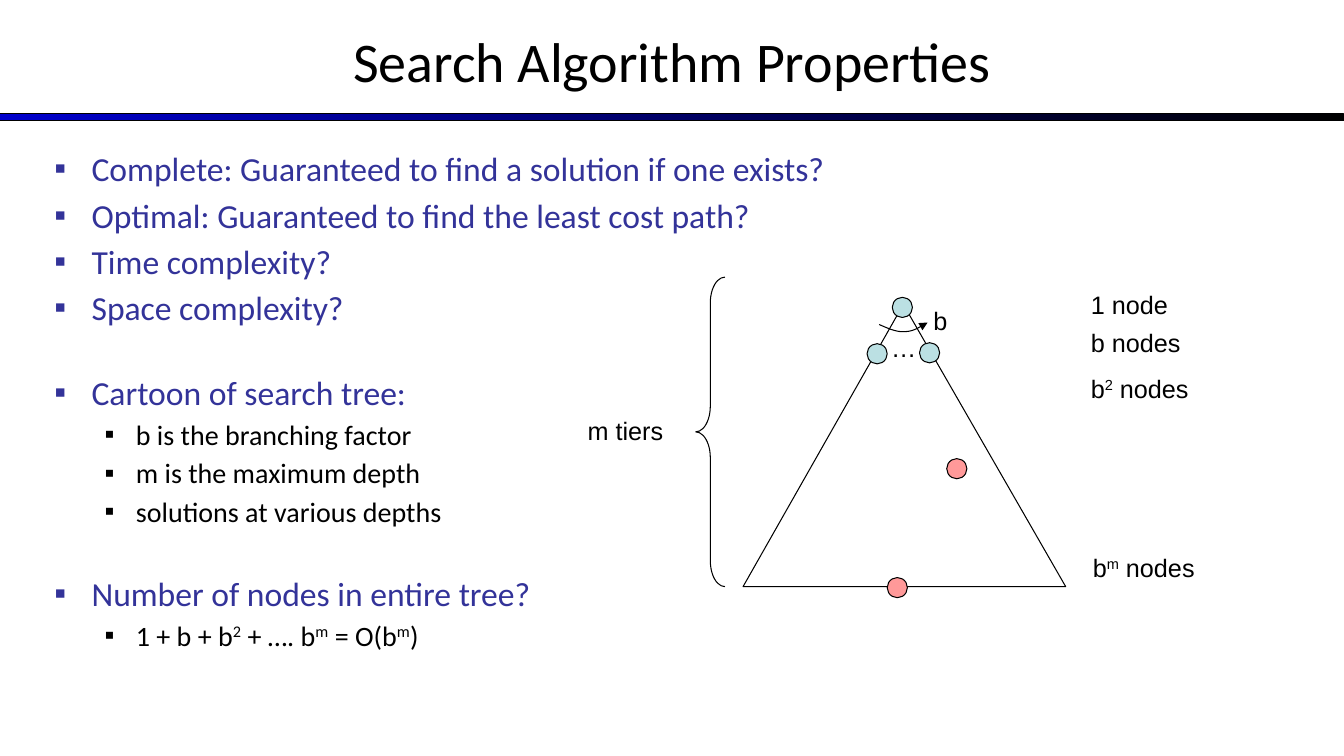
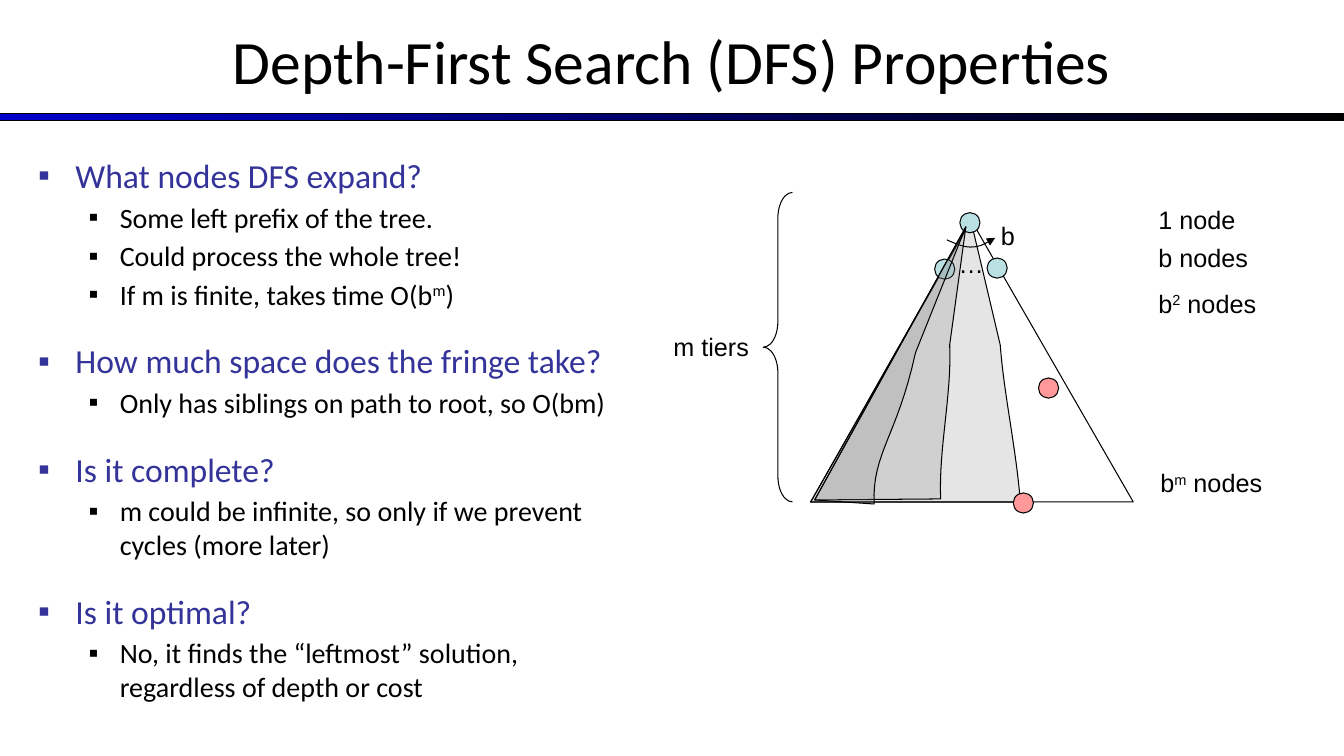
from dataclasses import dataclass

from lxml.etree import SubElement
from pptx import Presentation
from pptx.dml.color import RGBColor
from pptx.enum.shapes import MSO_SHAPE
from pptx.enum.text import MSO_ANCHOR, MSO_AUTO_SIZE, PP_ALIGN
from pptx.oxml.ns import qn
from pptx.shapes.autoshape import Shape
from pptx.slide import Slide
from pptx.util import Emu, Pt

EMU_PER_PX = 9144
SLIDE_W, SLIDE_H = 1333, 750
NODE_SIZE = 20
LABEL_H = 40
COLORS = {
    "ink": "000000",
    "heading": "333399",
    "band": "0000CC",
    "node": "BBE0E3",
    "goal": "FF9999",
    "sweep": "808080",
}

Point = tuple[int, int]
Outline = list[tuple[Point, ...]]


@dataclass(frozen=True)
class Label:
    """A tree label placed relative to the apex; carets enclose superscripts."""

    text: str
    left: int
    top: int
    width: int


@dataclass(frozen=True)
class Level:
    """The look of one outline level."""

    size: int
    color: str
    margin: int
    hanging: int
    space_before: float


@dataclass(frozen=True)
class Topic:
    """A heading with the points listed under it."""

    heading: str
    points: tuple[str, ...] = ()
    space_before: float = 4.3


@dataclass(frozen=True)
class Tree:
    """What differs between the search trees."""

    apex: Point
    tiers: Label
    goals: tuple[Point, ...]


HEADING = Level(24, "heading", 37, 37, 4.3)
POINT = Level(20, "ink", 81, 31, 3.5)

TREE_SIDES: Outline = [((-159, 280),), ((161, 280),), ((0, 0),)]
BRANCH_ARC: Outline = [
    ((-24, 20),),
    ((-15, 24), (-6, 28), (2, 27)),
    ((10, 27), (17, 22), (24, 18)),
]
TREE_NODES: list[Point] = [(-11, -7), (-36, 39), (16, 38)]
TREE_LABELS = [
    Label("…", -22, 23, 30),
    Label("b", 20, -4, 33),
    Label("1 node", 176, -20, 122),
    Label("b nodes", 176, 18, 122),
    Label("b^2^ nodes", 176, 63, 122),
    Label("b^m^ nodes", 178, 241, 160),
]

WIDE_SWEEP: Outline = [
    ((804, 498),),
    ((1012, 498),),
    ((1008, 446), (996, 393), (992, 342)),
    ((963, 219),),
]
NARROW_SWEEPS: list[Outline] = [
    [
        ((808, 496),),
        ((933, 495),),
        ((931, 444), (944, 393), (942, 342)),
        ((958, 225),),
    ],
    [
        ((808, 496),),
        ((867, 500),),
        ((865, 449), (890, 433), (908, 350)),
        ((958, 225),),
    ],
]

PROPERTY_TOPICS = [
    Topic("Complete: Guaranteed to find a solution if one exists?"),
    Topic("Optimal: Guaranteed to find the least cost path?"),
    Topic("Time complexity?"),
    Topic("Space complexity?"),
    Topic(
        "Cartoon of search tree:",
        (
            "b is the branching factor",
            "m is the maximum depth",
            "solutions at various depths",
        ),
        32,
    ),
    Topic("Number of nodes in entire tree?", ("1 + b + b^2^ + …. b^m^ = O(b^m^)",), 32),
]
DFS_TOPICS = [
    Topic(
        "What nodes DFS expand?",
        (
            "Some left prefix of the tree.",
            "Could process the whole tree!",
            "If m is finite, takes time O(b^m^)",
        ),
    ),
    Topic(
        "How much space does the fringe take?",
        ("Only has siblings on path to root, so O(bm)",),
        21,
    ),
    Topic(
        "Is it complete?",
        ("m could be infinite, so only if we prevent cycles (more later)",),
        21,
    ),
    Topic(
        "Is it optimal?",
        ("No, it finds the “leftmost” solution, regardless of depth or cost",),
        21,
    ),
]


def px(length: float) -> Emu:
    """Turn px into EMU."""
    return Emu(round(length * EMU_PER_PX))


def rgb(name: str) -> RGBColor:
    """Look up a named colour."""
    return RGBColor.from_string(COLORS[name])


def style_shape(shape: Shape, fill: str | None = None) -> None:
    """Give a shape a thin black line, an optional fill and no shadow."""
    shape.shadow.inherit = False
    shape.line.color.rgb = rgb("ink")
    shape.line.width = Pt(0.75)
    if fill:
        shape.fill.solid()
        shape.fill.fore_color.rgb = rgb(fill)
    else:
        shape.fill.background()


def add_preset(
    slide: Slide, preset: MSO_SHAPE, box: tuple[int, int, int, int], fill: str | None = None
) -> Shape:
    """Draw a styled preset shape."""
    shape = slide.shapes.add_shape(preset, *map(px, box))
    style_shape(shape, fill)
    return shape


def add_node(slide: Slide, left: int, top: int, fill: str) -> None:
    """Draw one tree node."""
    add_preset(slide, MSO_SHAPE.OVAL, (left, top, NODE_SIZE, NODE_SIZE), fill)


def trace(outline: Outline, steps: int = 16) -> list[tuple[float, float]]:
    """List the vertices of an outline made of lines and cubic curves."""
    vertices: list[tuple[float, float]] = []
    for segment in outline:
        if len(segment) == 1:
            vertices.append(segment[0])
            continue
        controls = (vertices[-1], *segment)
        for step in range(1, steps + 1):
            t = step / steps
            weights = ((1 - t) ** 3, 3 * t * (1 - t) ** 2, 3 * t * t * (1 - t), t**3)
            x, y = (sum(w * c[axis] for w, c in zip(weights, controls)) for axis in (0, 1))
            vertices.append((x, y))
    return vertices


def add_outline(
    slide: Slide, outline: Outline, origin: Point = (0, 0), closed: bool = True, fill: str | None = None
) -> Shape:
    """Draw a styled freeform."""
    start, *rest = [(px(x + origin[0]), px(y + origin[1])) for x, y in trace(outline)]
    builder = slide.shapes.build_freeform(*start, scale=1.0)
    builder.add_line_segments(rest, close=closed)
    shape = builder.convert_to_shape()
    style_shape(shape, fill)
    return shape


def add_sweep(slide: Slide, outline: Outline) -> None:
    """Draw a translucent region of expanded nodes."""
    sweep = add_outline(slide, outline, fill="sweep")
    tint = sweep._element.spPr.find(qn("a:solidFill"))[0]
    SubElement(tint, qn("a:alpha"), val="20000")


def write_runs(paragraph, text: str, font: str, size: int, color: str) -> None:
    """Write text whose caret-enclosed parts are superscripts."""
    for index, part in enumerate(text.split("^")):
        run = paragraph.add_run()
        run.text = part
        run.font.name = font
        run.font.size = Pt(size)
        run.font.color.rgb = rgb(color)
        if index % 2:
            run._r.get_or_add_rPr().set("baseline", "30000")


def add_label(slide: Slide, label: Label, apex: Point) -> None:
    """Write one tree label."""
    box = (apex[0] + label.left, apex[1] + label.top, label.width, LABEL_H)
    frame = slide.shapes.add_textbox(*map(px, box)).text_frame
    frame.word_wrap = True
    write_runs(frame.paragraphs[0], label.text, "Arial", 18, "ink")


def add_tree(slide: Slide, tree: Tree) -> None:
    """Draw the search tree with its labels and goals."""
    x, y = tree.apex
    add_outline(slide, TREE_SIDES, tree.apex)
    for left, top in TREE_NODES:
        add_node(slide, x + left, y + top, "node")
    arc = add_outline(slide, BRANCH_ARC, tree.apex, closed=False)
    SubElement(arc.line._get_or_add_ln(), qn("a:tailEnd"), type="triangle")
    brace = add_preset(slide, MSO_SHAPE.LEFT_BRACE, (x - 206, y - 27, 29, 307))
    brace.adjustments[0] = 0.88
    for label in (*TREE_LABELS, tree.tiers):
        add_label(slide, label, tree.apex)
    for left, top in tree.goals:
        add_node(slide, left, top, "goal")


def write_item(paragraph, text: str, level: Level, space_before: float) -> None:
    """Write one bulleted line."""
    props = paragraph._p.get_or_add_pPr()
    props.set("marL", str(px(level.margin)))
    props.set("indent", str(px(-level.hanging)))
    SubElement(SubElement(props, qn("a:buClr")), qn("a:srgbClr"), val=COLORS[level.color])
    SubElement(props, qn("a:buFont"), typeface="Arial")
    SubElement(props, qn("a:buChar"), char="▪")
    paragraph.space_before = Pt(space_before)
    write_runs(paragraph, text, "Calibri", level.size, level.color)


def add_topics(slide: Slide, topics: list[Topic], box: tuple[int, int, int, int]) -> None:
    """Write the topics as a two-level list."""
    frame = slide.shapes.add_textbox(*map(px, box)).text_frame
    frame.word_wrap = True
    for index, topic in enumerate(topics):
        paragraph = frame.add_paragraph() if index else frame.paragraphs[0]
        write_item(paragraph, topic.heading, HEADING, topic.space_before if index else 0)
        for point in topic.points:
            write_item(frame.add_paragraph(), point, POINT, POINT.space_before)


def add_titled_slide(deck, title_text: str, size: int) -> Slide:
    """Add a slide with the gradient band and a centred title."""
    slide = deck.slides.add_slide(deck.slide_layouts[5])
    band = add_preset(slide, MSO_SHAPE.RECTANGLE, (0, 113, SLIDE_W, 7))
    band.fill.gradient()
    band.fill.gradient_angle = 0
    for stop, color in zip(band.fill.gradient_stops, ("band", "ink")):
        stop.color.rgb = rgb(color)
    title = slide.shapes.title
    title.left, title.top, title.width, title.height = map(px, (0, -3, SLIDE_W, 125))
    frame = title.text_frame
    frame.text = title_text
    frame.auto_size = MSO_AUTO_SIZE.NONE
    frame.vertical_anchor = MSO_ANCHOR.MIDDLE
    frame.paragraphs[0].alignment = PP_ALIGN.CENTER
    font = frame.paragraphs[0].runs[0].font
    font.name, font.size, font.color.rgb = "Calibri", Pt(size), rgb("ink")
    return slide


def main() -> None:
    """Build and save the deck."""
    deck = Presentation()
    deck.slide_width, deck.slide_height = px(SLIDE_W), px(SLIDE_H)

    properties = add_titled_slide(deck, "Search Algorithm Properties", 40)
    add_topics(properties, PROPERTY_TOPICS, (44, 142, 1244, 517))
    tiers = Label("m tiers", -323, 105, 138)
    add_tree(properties, Tree((896, 302), tiers, ((880, 573), (939, 455))))

    dfs = add_titled_slide(deck, "Depth-First Search (DFS) Properties", 44)
    add_sweep(dfs, WIDE_SWEEP)
    tiers = Label("m tiers", -305, 106, 138)
    add_tree(dfs, Tree((963, 218), tiers, ((1005, 489), (1030, 375))))
    add_topics(dfs, DFS_TOPICS, (28, 149, 597, 517))
    for sweep in NARROW_SWEEPS:
        add_sweep(dfs, sweep)

    deck.save("out.pptx")


if __name__ == "__main__":
    main()
